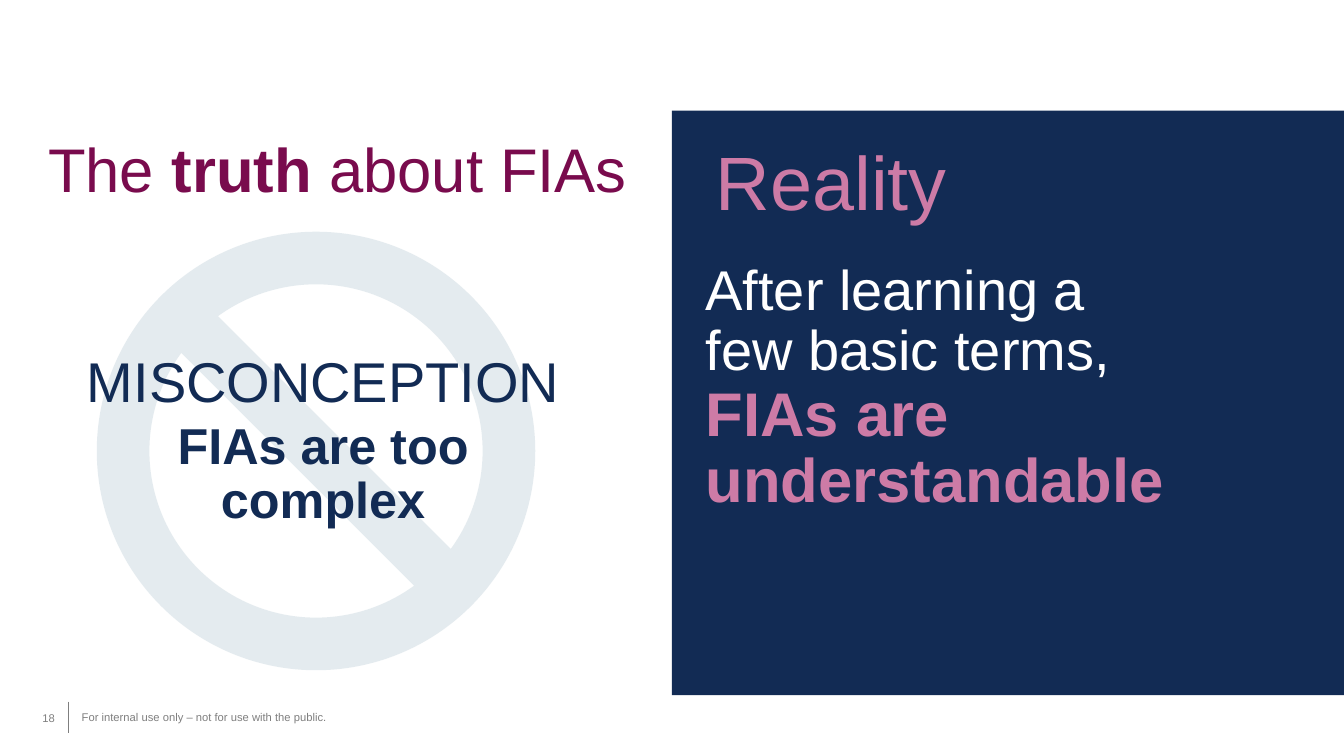
from lxml import etree
from pptx import Presentation
from pptx.dml.color import RGBColor
from pptx.enum.shapes import MSO_CONNECTOR, MSO_SHAPE
from pptx.enum.text import MSO_ANCHOR, MSO_AUTO_SIZE, PP_ALIGN
from pptx.oxml.ns import qn
from pptx.util import Cm, Pt

RECTANGLE, NO_SYMBOL = MSO_SHAPE.RECTANGLE, MSO_SHAPE.NO_SYMBOL
STRAIGHT = MSO_CONNECTOR.STRAIGHT
TOP, MIDDLE, BOTTOM = MSO_ANCHOR.TOP, MSO_ANCHOR.MIDDLE, MSO_ANCHOR.BOTTOM
LEFT, CENTER = PP_ALIGN.LEFT, PP_ALIGN.CENTER
NO_AUTOFIT = MSO_AUTO_SIZE.NONE

FONT = "Arial"
COLORS = {
    "navy": "122B54",
    "plum": "790B4D",
    "pink": "CD7BA6",
    "mist": "CBD9E0",
    "gray": "7F7F7F",
    "white": "FFFFFF",
}
SLIDE_WIDTH, SLIDE_HEIGHT = 33.87, 19.05
HALF_WIDTH = SLIDE_WIDTH / 2
BAND_TOP, BAND_HEIGHT = 2.79, 14.73


def color(name):
    return RGBColor.from_string(COLORS[name])


def place(left, top, width, height):
    return Cm(left), Cm(top), Cm(width), Cm(height)


def write(shape, paragraphs, size, fill, align=LEFT, anchor=TOP,
          insets=(0, 0, 0, 0), line_spacing=1.0, space_between=0):
    """Fill a shape with paragraphs, each a list of (text, font overrides); "\\n" breaks a line."""
    frame = shape.text_frame
    frame.word_wrap = True
    frame.auto_size = NO_AUTOFIT
    frame.vertical_anchor = anchor
    (frame.margin_left, frame.margin_top,
     frame.margin_right, frame.margin_bottom) = map(Cm, insets)
    for index, runs in enumerate(paragraphs):
        paragraph = frame.add_paragraph() if index else frame.paragraphs[0]
        paragraph.alignment = align
        paragraph.line_spacing = line_spacing
        paragraph.space_before = Pt(space_between if index else 0)
        for text, overrides in runs:
            for line_number, line in enumerate(text.split("\n")):
                if line_number:
                    paragraph.add_line_break()
                if line:
                    run = paragraph.add_run()
                    run.text = line
                    run.font.name = FONT
                    run.font.size = Pt(overrides.get("size", size))
                    run.font.bold = overrides.get("bold", False)
                    run.font.color.rgb = color(overrides.get("fill", fill))


def add_text(slide, box, paragraphs, **text_format):
    write(slide.shapes.add_textbox(*place(*box)), paragraphs, **text_format)


def add_filled_shape(slide, kind, box, fill):
    shape = slide.shapes.add_shape(kind, *place(*box))
    shape.shadow.inherit = False
    shape.fill.solid()
    shape.fill.fore_color.rgb = color(fill)
    shape.line.fill.background()
    return shape


def add_misconception(slide, left, top):
    title = slide.shapes.title
    title.left, title.top, title.width, title.height = place(left + 1.07, top, 14.88, 2.39)
    write(title, [[("The ", {}), ("truth ", {"bold": True}), ("about FIAs", {})]],
          size=44, fill="plum", align=CENTER, anchor=BOTTOM, line_spacing=0.9)

    sign = add_filled_shape(slide, NO_SYMBOL, (left + 2.44, top + 3.05, 11.05, 11.05), "mist")
    sign.adjustments[0] = 0.12
    fill_color = sign.fill._xPr.find(qn("a:solidFill"))[0]
    etree.SubElement(fill_color, qn("a:alpha"), val="50000")

    add_text(slide, (left + 1.6, top + 5.62, 12.83, 6.12),
             [[("MISCONCEPTION", {})],
              [("FIAs are too complex", {"size": 36, "bold": True})]],
             size=40, fill="navy", align=CENTER, insets=(0.51, 0.51, 0.25, 0.25),
             line_spacing=0.9, space_between=4.4)


def add_reality(slide, left, top, width, height):
    add_filled_shape(slide, RECTANGLE, (left, top, width, height), "navy")
    text_left = left + 0.85
    add_text(slide, (text_left, top + 0.49, 6.4, 2.57), [[("Reality", {})]],
             size=54, fill="pink", insets=(0.25, 0.13, 0.25, 0.13))
    add_text(slide, (text_left, top + 3.81, 15.32, 8.51),
             [[("After learning a\nfew basic terms,\n", {}),
               ("FIAs are understandable", {"size": 44, "bold": True, "fill": "pink"})]],
             size=40, fill="white", line_spacing=0.9)


def add_footer(slide, left, top):
    add_text(slide, (left, top, 1.02, 1.02), [[("18", {})]],
             size=8, fill="gray", anchor=MIDDLE, insets=(0, 0.15, 0, 0.15))
    rule_left = left + 0.66
    rule = slide.shapes.add_connector(
        STRAIGHT, Cm(rule_left), Cm(top + 0.1), Cm(rule_left), Cm(top + 0.89))
    rule.line.color.rgb = color("gray")
    rule.line.width = Pt(0.75)
    etree.SubElement(rule._element.spPr, qn("a:effectLst"))
    add_text(slide, (left + 0.99, top + 0.17, 30.25, 0.66),
             [[("For internal use only – not for use with the public.", {})]],
             size=8, fill="gray", insets=(0, 0.15, 0.3, 0.15))


def main():
    presentation = Presentation()
    presentation.slide_width = Cm(SLIDE_WIDTH)
    presentation.slide_height = Cm(SLIDE_HEIGHT)
    title_only = presentation.slide_layouts[5]
    slide = presentation.slides.add_slide(title_only)
    add_misconception(slide, 0, BAND_TOP)
    add_reality(slide, HALF_WIDTH, BAND_TOP, HALF_WIDTH, BAND_HEIGHT)
    add_footer(slide, 1.07, 17.58)
    presentation.save("out.pptx")


if __name__ == "__main__":
    main()
